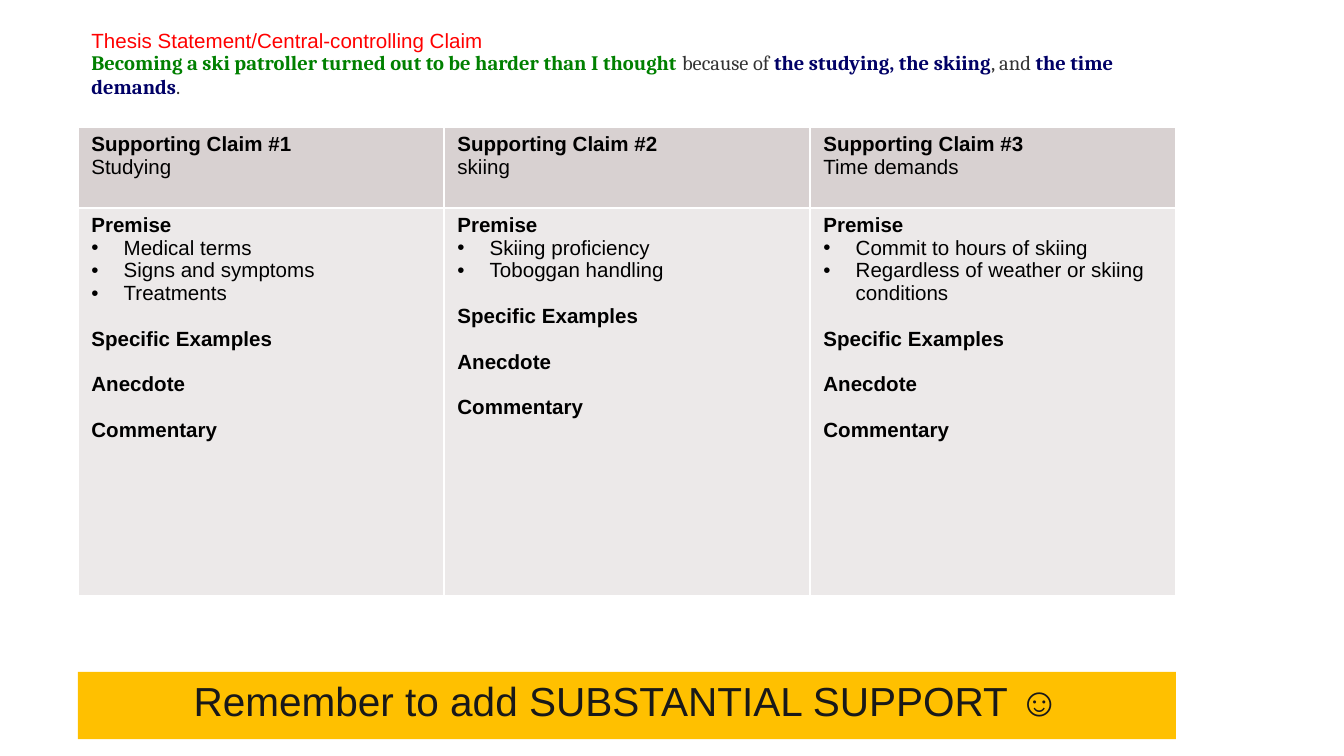
from lxml.etree import SubElement
from pptx import Presentation
from pptx.dml.color import RGBColor
from pptx.enum.shapes import MSO_SHAPE
from pptx.enum.text import MSO_ANCHOR, PP_ALIGN
from pptx.oxml import parse_xml
from pptx.oxml.ns import nsdecls, qn
from pptx.util import Inches, Pt

THESIS_LABEL = "Thesis Statement/Central-controlling Claim"
THESIS = [
    ("Becoming a ski patroller turned out to be harder than I thought ", "008000", True),
    ("because of ", "333333", False),
    ("the studying, the skiing", "000066", True),
    (", and ", "333333", False),
    ("the time demands", "000066", True),
    (".", "333333", False),
]
CLAIMS = [
    ("Studying", ["Medical terms", "Signs and symptoms", "Treatments"]),
    ("skiing", ["Skiing proficiency", "Toboggan handling"]),
    ("Time demands", ["Commit to hours of skiing",
                      "Regardless of weather or skiing conditions"]),
]
SUPPORT = ["Specific Examples", "Anecdote", "Commentary"]
REMINDER = "Remember to add SUBSTANTIAL SUPPORT ☺"

SLIDE_WIDTH = Inches(10)
SLIDE_HEIGHT = SLIDE_WIDTH * 9 // 16
LEFT, TOP, WIDTH = 0.58, 0.18, 8.17
ROW_HEIGHTS = [0.77, 0.6, 2.88]
BANNER_TOP, BANNER_HEIGHT = 5, 0.5
TEXT_SIZE, LINE_GAP, BULLET_INDENT = 11, 12.2, 0.24


def color(hex_code):
    """Turn a hex string into a colour."""
    return RGBColor.from_string(hex_code)


def add_span(para, text, hex_code="000000", bold=False, font="Arial", size=TEXT_SIZE):
    """Add one formatted run to a paragraph."""
    span = para.add_run()
    span.text = text
    span.font.name = font
    span.font.size = Pt(size)
    span.font.bold = bold
    span.font.color.rgb = color(hex_code)


def add_bullet(para):
    """Give a paragraph a hanging round bullet."""
    properties = para._p.get_or_add_pPr()
    properties.set("marL", str(Inches(BULLET_INDENT)))
    properties.set("indent", str(-Inches(BULLET_INDENT)))
    SubElement(properties, qn("a:buFont"), typeface="Arial")
    SubElement(properties, qn("a:buChar"), char="•")


def style_cell(cell, fill):
    """Set the fill, margins and white borders of a cell."""
    cell.fill.solid()
    cell.fill.fore_color.rgb = color(fill)
    cell.margin_left = cell.margin_right = Inches(0.1)
    cell.margin_top = cell.margin_bottom = Inches(0.04)
    cell.vertical_anchor = MSO_ANCHOR.TOP
    properties = cell._tc.get_or_add_tcPr()
    for position, side in enumerate(("lnL", "lnR", "lnT", "lnB")):
        properties.insert(position, parse_xml(
            f'<a:{side} {nsdecls("a")} w="{Pt(1)}"><a:solidFill>'
            f'<a:srgbClr val="FFFFFF"/></a:solidFill></a:{side}>'))


def fill_thesis(cell):
    """Write the thesis label and statement."""
    add_span(cell.text_frame.paragraphs[0], THESIS_LABEL, "FF0000")
    para = cell.text_frame.add_paragraph()
    for text, hex_code, bold in THESIS:
        add_span(para, text, hex_code, bold, "Cambria")


def fill_claim(cell, number, topic):
    """Write a numbered claim heading and its topic."""
    add_span(cell.text_frame.paragraphs[0], f"Supporting Claim #{number}", bold=True)
    add_span(cell.text_frame.add_paragraph(), topic)


def fill_support(cell, premises):
    """Write the premises and the support headings."""
    frame = cell.text_frame
    add_span(frame.paragraphs[0], "Premise", bold=True)
    for premise in premises:
        para = frame.add_paragraph()
        add_bullet(para)
        add_span(para, premise)
    for heading in SUPPORT:
        para = frame.add_paragraph()
        para.space_before = Pt(LINE_GAP)
        add_span(para, heading, bold=True)


def add_claims_table(page):
    """Add the thesis and claims table."""
    table = page.shapes.add_table(
        len(ROW_HEIGHTS), len(CLAIMS), Inches(LEFT), Inches(TOP),
        Inches(WIDTH), Inches(sum(ROW_HEIGHTS))).table
    for row, height in zip(table.rows, ROW_HEIGHTS):
        row.height = Inches(height)
    for row, fill in zip(table.rows, ("FFFFFF", "D8D1D1", "ECE9E9")):
        for cell in row.cells:
            style_cell(cell, fill)
    table.cell(0, 0).merge(table.cell(0, len(CLAIMS) - 1))
    fill_thesis(table.cell(0, 0))
    for column, (topic, premises) in enumerate(CLAIMS):
        fill_claim(table.cell(1, column), column + 1, topic)
        fill_support(table.cell(2, column), premises)


def add_banner(page):
    """Add the reminder banner."""
    banner = page.shapes.add_shape(
        MSO_SHAPE.RECTANGLE, Inches(LEFT), Inches(BANNER_TOP),
        Inches(WIDTH), Inches(BANNER_HEIGHT))
    banner.shadow.inherit = False
    banner.fill.solid()
    banner.fill.fore_color.rgb = color("FFC000")
    banner.line.fill.background()
    frame = banner.text_frame
    frame.word_wrap = True
    frame.vertical_anchor = MSO_ANCHOR.TOP
    frame.margin_left = frame.margin_right = Inches(0.1)
    frame.margin_top = frame.margin_bottom = Inches(0.1)
    para = frame.paragraphs[0]
    para.alignment = PP_ALIGN.CENTER
    para.line_spacing = 0.8
    add_span(para, REMINDER, "191919", size=21.7)


def main():
    """Build and save the deck."""
    deck = Presentation()
    deck.slide_width, deck.slide_height = SLIDE_WIDTH, SLIDE_HEIGHT
    page = deck.slides.add_slide(deck.slide_layouts.get_by_name("Blank"))
    add_claims_table(page)
    add_banner(page)
    deck.save("out.pptx")


if __name__ == "__main__":
    main()
